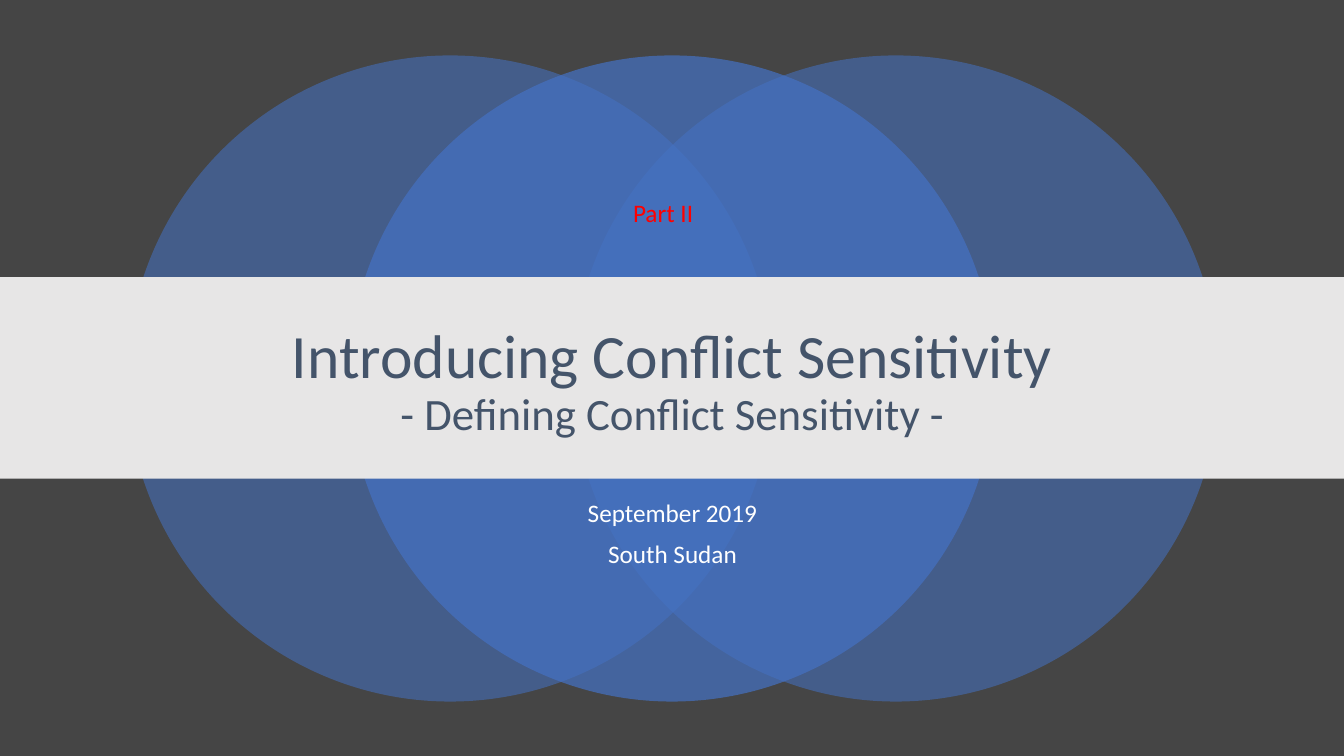
from dataclasses import dataclass

import lxml.etree
import pptx
import pptx.dml.color
import pptx.enum.shapes
import pptx.enum.text
import pptx.oxml.ns
import pptx.shapes.autoshape
import pptx.slide
import pptx.util
from pptx.util import Inches

ALIGN = pptx.enum.text.PP_ALIGN
ANCHOR = pptx.enum.text.MSO_ANCHOR
SHAPE = pptx.enum.shapes.MSO_SHAPE


@dataclass(frozen=True)
class Theme:
    font: str = "Calibri"
    background: str = "454545"
    circle: str = "4472C4"
    band: str = "E7E6E6"
    title: str = "44546A"
    details: str = "FFFFFF"
    heading: str = "FF0000"
    title_size: int = 44
    subtitle_size: int = 32
    body_size: int = 18


THEME = Theme()


@dataclass(frozen=True)
class Box:
    left: float
    top: float
    width: float
    height: float

    def lengths(self) -> tuple[int, int, int, int]:
        return Inches(self.left), Inches(self.top), Inches(self.width), Inches(self.height)


@dataclass(frozen=True)
class Line:
    text: str
    size: int


@dataclass(frozen=True)
class TextBlock:
    """Paragraphs, each made of lines parted by soft breaks."""

    box: Box
    paragraphs: tuple[tuple[Line, ...], ...]
    color: str
    align: ALIGN = ALIGN.CENTER
    anchor: ANCHOR = ANCHOR.TOP
    line_spacing: float = 0.9
    space_before: int = 0


@dataclass(frozen=True)
class Circle:
    left: float
    opacity: int


CIRCLE_TOP = 0.55
CIRCLE_SIZE = 6.41
CIRCLES = (Circle(1.26, 55), Circle(5.68, 55), Circle(3.46, 70))
BAND = Box(0, 2.75, 13.33, 2)

TEXT_BLOCKS = (
    TextBlock(
        Box(1.67, 4.92, 10, 1.34),
        (
            (Line("September 2019", THEME.body_size),),
            (Line("South Sudan", THEME.body_size),),
        ),
        THEME.details,
        space_before=10,
    ),
    TextBlock(
        Box(1.67, 3.04, 10, 1.51),
        (
            (
                Line("Introducing Conflict Sensitivity", THEME.title_size),
                Line("- Defining Conflict Sensitivity -", THEME.subtitle_size),
            ),
        ),
        THEME.title,
        anchor=ANCHOR.MIDDLE,
    ),
    TextBlock(
        Box(6.18, 1.91, 3.69, 0.4),
        ((Line("Part II", THEME.body_size),),),
        THEME.heading,
        align=ALIGN.LEFT,
        line_spacing=1.0,
    ),
)


def rgb(color: str) -> pptx.dml.color.RGBColor:
    return pptx.dml.color.RGBColor.from_string(color)


def add_filled_shape(
    slide: pptx.slide.Slide, kind: SHAPE, box: Box, color: str, opacity: int = 100
) -> pptx.shapes.autoshape.Shape:
    shape = slide.shapes.add_shape(kind, *box.lengths())
    shape.shadow.inherit = False
    shape.line.fill.background()
    shape.fill.solid()
    shape.fill.fore_color.rgb = rgb(color)
    if opacity < 100:
        color_element = shape.element.spPr.find(".//" + pptx.oxml.ns.qn("a:srgbClr"))
        alpha = lxml.etree.SubElement(color_element, pptx.oxml.ns.qn("a:alpha"))
        alpha.set("val", str(opacity * 1000))
    return shape


def add_text_block(slide: pptx.slide.Slide, block: TextBlock) -> None:
    frame = slide.shapes.add_textbox(*block.box.lengths()).text_frame
    frame.word_wrap = True
    frame.vertical_anchor = block.anchor
    for index, lines in enumerate(block.paragraphs):
        paragraph = frame.add_paragraph() if index else frame.paragraphs[0]
        paragraph.alignment = block.align
        paragraph.line_spacing = block.line_spacing
        paragraph.space_before = pptx.util.Pt(block.space_before)
        paragraph.font.name = THEME.font
        paragraph.font.color.rgb = rgb(block.color)
        paragraph.font.size = pptx.util.Pt(lines[0].size)
        for position, line in enumerate(lines):
            if position:
                paragraph.add_line_break()
            run = paragraph.add_run()
            run.text = line.text
            if line.size != lines[0].size:
                run.font.size = pptx.util.Pt(line.size)


def main() -> None:
    presentation = pptx.Presentation()
    presentation.slide_width = Inches(13.33)
    presentation.slide_height = Inches(7.5)
    slide = presentation.slides.add_slide(presentation.slide_layouts[6])
    slide.background.fill.solid()
    slide.background.fill.fore_color.rgb = rgb(THEME.background)

    for circle in CIRCLES:
        box = Box(circle.left, CIRCLE_TOP, CIRCLE_SIZE, CIRCLE_SIZE)
        add_filled_shape(slide, SHAPE.OVAL, box, THEME.circle, circle.opacity)
    add_filled_shape(slide, SHAPE.RECTANGLE, BAND, THEME.band)
    for block in TEXT_BLOCKS:
        add_text_block(slide, block)

    presentation.save("out.pptx")


if __name__ == "__main__":
    main()
